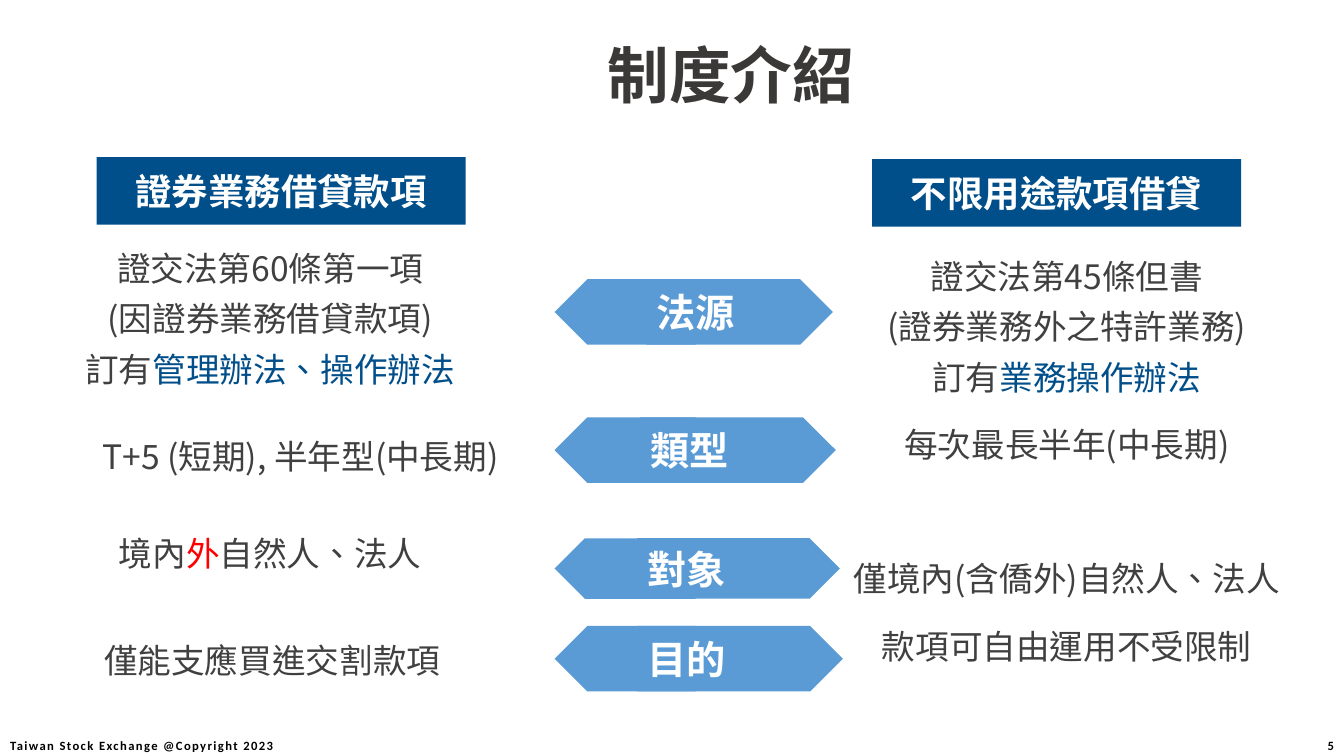
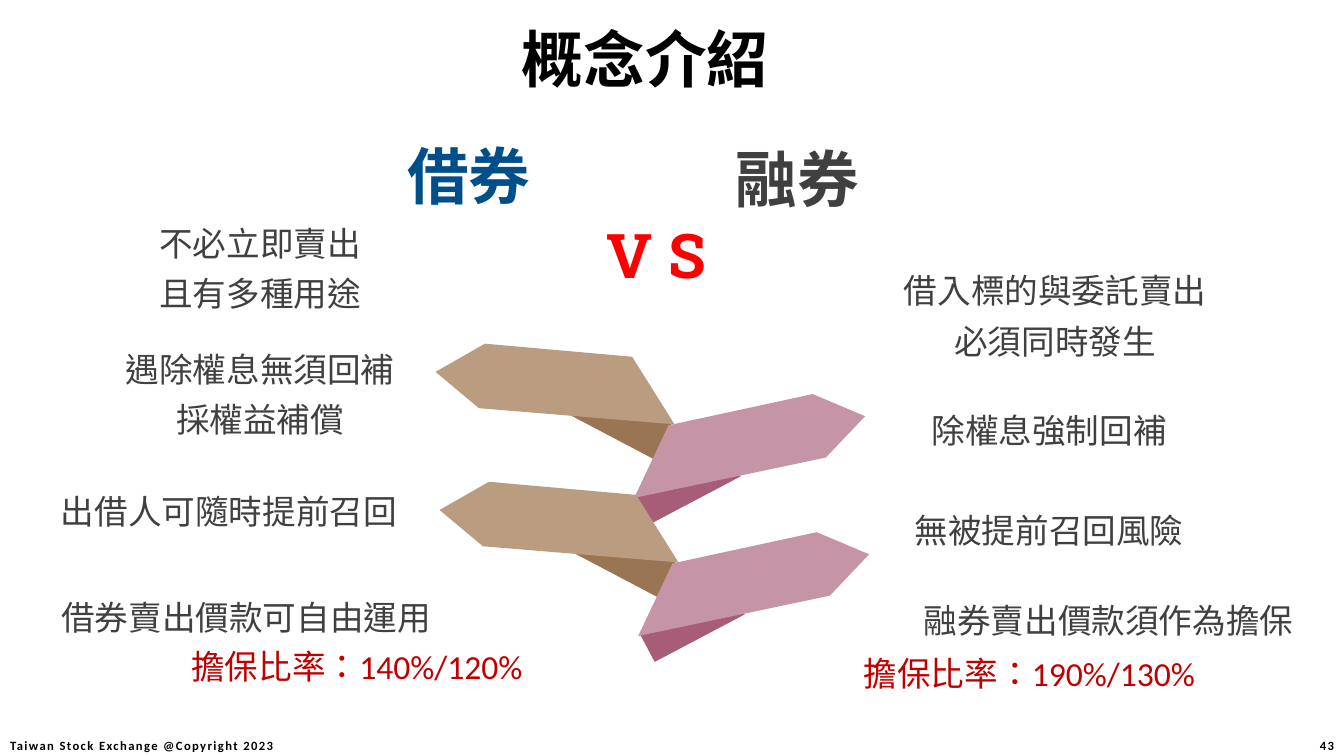
"""Build two slides that compare securities lending schemes."""
from lxml.etree import SubElement
from pptx import Presentation
from pptx.dml.color import RGBColor
from pptx.enum.lang import MSO_LANGUAGE_ID
from pptx.enum.shapes import MSO_SHAPE
from pptx.enum.text import MSO_ANCHOR, PP_ALIGN
from pptx.oxml.ns import qn
from pptx.util import Inches, Pt

WIDE, HIGH = 13.33, 7.5
SANS, LATIN, SLAB = "Noto Sans CJK SC", "Calibri", "Roboto Slab"
NAVY, BLUE, GREY, DARK = "004F8A", "5B9BD5", "404040", "3B3838"
WHITE, BLACK, RED, WINE = "FFFFFF", "000000", "FF0000", "C00000"
LEFT, MID, RIGHT = PP_ALIGN.LEFT, PP_ALIGN.CENTER, PP_ALIGN.RIGHT
LINE = 0.5

HEADS = [("證券業務借貸款項", 0.96, 1.56), ("不限用途款項借貸", 8.65, 1.58)]
TERMS = [
    (0.68, 3.11, 4, 3, [("證交法第60條第一項\v(因證券業務借貸款項)\v訂有", GREY),
                        ("管理辦法、操作辦法", NAVY)]),
    (0.72, 4.47, 4.52, 2, [("T+5 (短期), 半年型(中長期)", GREY)]),
    (0.68, 5.44, 4, 1, [("境內", GREY), ("外", RED), ("自然人、法人", GREY)]),
    (0.7, 6.5, 4, 1, [("僅能支應買進交割款項", GREY)]),
]
LOANS = [
    ([("證交法第45條但書\v(證券業務外之特許業務)\v訂有", GREY),
      ("業務操作辦法", NAVY)], 12),
    ([("每次最長半年(中長期)", GREY)], 60),
    ([("僅境內(含僑外)自然人、法人", GREY)], 12),
    ([("款項可自由運用不受限制", GREY)], 12),
]
TOPICS = [
    ("法源", 2.77, 0.65, 6.41, 8.26),
    ("類型", 4.14, 0.65, 6.35, 8.29),
    ("對象", 5.34, 0.6, 6.32, 8.33),
    ("目的", 6.21, 0.65, 6.32, 8.36),
]
SIDES = [
    ("借券", 3.94, 1.35, LATIN, NAVY),
    ("融券", 7.2, 1.38, LATIN, GREY),
    ("V S", 5.92, 2.14, SLAB, RED),
]
POINTS = [
    (0.58, 2.61, 4, "不必立即賣出\v且有多種用途", GREY),
    (0.58, 3.86, 4, "遇除權息無須回補\v採權益補償", GREY),
    (0.27, 5.02, 4, "出借人可隨時提前召回", GREY),
    (0.44, 6.07, 4, "借券賣出價款可自由運用", GREY),
    (1.54, 6.56, 4, "擔保比率：140%/120%", WINE),
    (8.5, 3.08, 3.93, "借入標的與委託賣出\v必須同時發生", GREY),
    (8.44, 4.22, 3.93, "除權息強制回補", GREY),
    (8.6, 5.21, 3.61, "無被提前召回風險", GREY),
    (9.03, 6.1, 3.93, "融券賣出價款須作為擔保", GREY),
    (8.21, 6.63, 4, "擔保比率：190%/130%", WINE),
]
STEPS = [(0, 0), (0.04, 1.37)]
FOLDS = [(5.62, 3.94, 0.4, 27.8, "997553"), (6.32, 4.66, 0.32, 332.2, "A75C77")]
BANDS = [
    ("BA9C80", [(6.27, 3.54), (4.81, 3.41), (4.32, 3.69), (4.75, 4.05), (6.69, 4.21)]),
    ("C594A6", [(6.63, 4.22), (8.06, 3.91), (8.58, 4.13), (8.19, 4.54), (6.29, 4.94)]),
]


def tint(code):
    return RGBColor.from_string(code)


def style(run, size, code, face=SANS, bold=False, gap=0):
    font = run.font
    font.size, font.bold, font.name = Pt(size), bold, face
    font.color.rgb = tint(code)
    font.language_id = MSO_LANGUAGE_ID.TRADITIONAL_CHINESE
    props = run._r.get_or_add_rPr()
    SubElement(props, qn("a:ea")).set("typeface", SANS)
    if gap:
        props.set("spc", str(gap))


def write(para, parts, size, face=SANS, bold=False, align=MID, gap=0):
    para.alignment = align
    para.text = parts[0][0]
    codes = [parts[0][1]] * len(para.runs)
    for text, code in parts[1:]:
        para.add_run().text = text
        codes.append(code)
    for run, code in zip(para.runs, codes):
        style(run, size, code, face, bold, gap)


def frame(shape, pad=None, wrap=True, anchor=MSO_ANCHOR.MIDDLE):
    body = shape.text_frame
    body.word_wrap, body.vertical_anchor = wrap, anchor
    if pad is not None:
        body.margin_left = body.margin_right = Inches(pad)
        body.margin_top = body.margin_bottom = Inches(pad)
    return body


def box(slide, x, y, w, h, **opts):
    area = [Inches(v) for v in (x, y, w, h)]
    return frame(slide.shapes.add_textbox(*area), **opts)


def paint(shape, code):
    shape.shadow.inherit = False
    shape.fill.solid()
    shape.fill.fore_color.rgb = tint(code)
    shape.line.fill.background()
    return shape


def block(slide, kind, x, y, w, h, code, turn=0):
    area = [Inches(v) for v in (x, y, w, h)]
    shape = paint(slide.shapes.add_shape(kind, *area), code)
    shape.rotation = turn
    return shape


def note(slide, x, mid, w, rows, parts, face):
    h = rows * LINE + 0.1
    para = box(slide, x, mid - h / 2, w, h).paragraphs[0]
    write(para, parts, 24, face)
    para.line_spacing = Pt(36)


def page(deck, title, mid, y, code, num):
    slide = deck.slides.add_slide(deck.slide_layouts[6])
    head = box(slide, mid - 2, y - 0.46, 4, 0.92)
    write(head.paragraphs[0], [(title, code)], 44, bold=True)
    marks = [("Taiwan Stock Exchange @Copyright 2023", 0, 2.81, MID),
             (str(num), WIDE - 0.59, 0.49, RIGHT)]
    for text, x, w, align in marks:
        foot = box(slide, x, HIGH - 0.2, w, 0.2, pad=0, wrap=False)
        write(foot.paragraphs[0], [(text, BLACK)], 9, LATIN, True, align, 100)
    return slide


def scheme(deck):
    slide = page(deck, "制度介紹", 7.25, 0.73, DARK, 5)
    for text, x, y in HEADS:
        head = block(slide, MSO_SHAPE.RECTANGLE, x, y, 3.66, 0.67, NAVY)
        write(frame(head, 0.04).paragraphs[0], [(text, WHITE)], 26, bold=True)
    for x, mid, w, rows, parts in TERMS:
        note(slide, x, mid, w, rows, parts, SANS)
    body = box(slide, 8.29, 2.39, 4.58, 4.85, anchor=MSO_ANCHOR.TOP)
    for i, (parts, after) in enumerate(LOANS):
        para = body.add_paragraph() if i else body.paragraphs[0]
        write(para, parts, 24)
        para.line_spacing, para.space_after = Pt(36), Pt(after)
    for text, y, h, x, end in TOPICS:
        block(slide, MSO_SHAPE.PENTAGON, 5.5, y, 1.4, h, BLUE, 180)
        tag = block(slide, MSO_SHAPE.PENTAGON, x, y, end - x, h, BLUE)
        write(frame(tag).paragraphs[0], [(text, WHITE)], 28, bold=True, align=LEFT)


def concept(deck):
    slide = page(deck, "概念介紹", 6.4, 0.57, BLACK, 43)
    for text, x, y, face, code in SIDES:
        para = box(slide, x, y, 1.64, 0.86).paragraphs[0]
        write(para, [(text, code)], 44, face, True, LEFT)
        para.line_spacing = 0.9
    for x, mid, w, text, code in POINTS:
        note(slide, x, mid, w, text.count("\v") + 1, [(text, code)], LATIN)
    for dx, dy in STEPS:
        for x, y, h, turn, code in FOLDS:
            block(slide, MSO_SHAPE.RECTANGLE, x + dx, y + dy, 1.01, h, code, turn)
    for dx, dy in STEPS:
        for code, spots in BANDS:
            spots = [(Inches(x + dx), Inches(y + dy)) for x, y in spots]
            pen = slide.shapes.build_freeform(*spots[0])
            pen.add_line_segments(spots[1:], close=True)
            paint(pen.convert_to_shape(), code)


def main():
    deck = Presentation()
    deck.slide_width, deck.slide_height = Inches(WIDE), Inches(HIGH)
    scheme(deck)
    concept(deck)
    deck.save("out.pptx")


if __name__ == "__main__":
    main()
